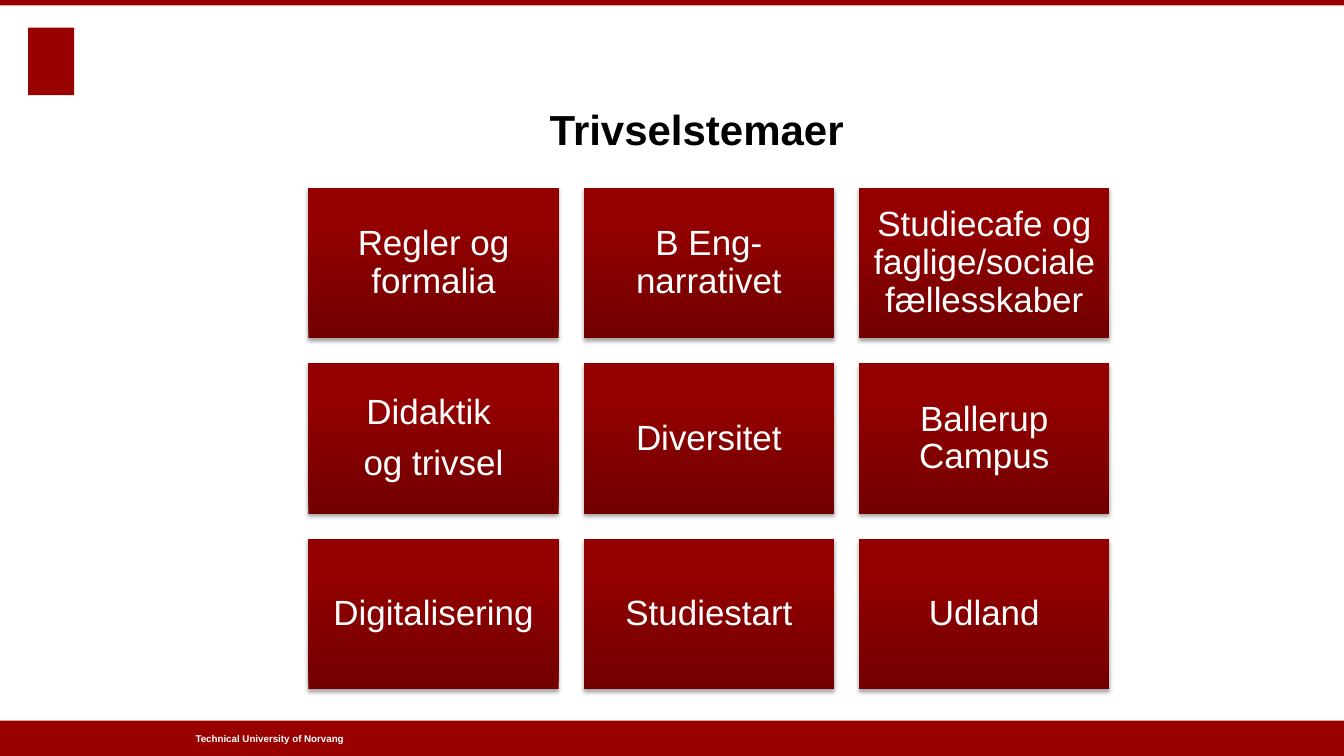
import dataclasses

import lxml.etree
import pptx
import pptx.dml.color
import pptx.enum.shapes
import pptx.enum.text
import pptx.oxml.ns
import pptx.util

Cm = pptx.util.Cm
Pt = pptx.util.Pt
RGBColor = pptx.dml.color.RGBColor
Align = pptx.enum.text.PP_ALIGN
Anchor = pptx.enum.text.MSO_ANCHOR

RED = RGBColor(0x99, 0x00, 0x00)
DARK = RGBColor(0x72, 0x00, 0x00)
LIGHT = RGBColor(0x94, 0x00, 0x00)
WHITE = RGBColor(0xFF, 0xFF, 0xFF)
BLACK = RGBColor(0x00, 0x00, 0x00)

WIDE, HIGH = 33.87, 19.05
COLS = 3


@dataclasses.dataclass
class Box:
    """A place on the slide, in centimetres."""
    left: float
    top: float
    width: float
    height: float

    def place(self) -> tuple:
        return Cm(self.left), Cm(self.top), Cm(self.width), Cm(self.height)


@dataclasses.dataclass
class Style:
    size: float
    color: RGBColor
    bold: bool = False
    align: Align = Align.CENTER
    line: float = 1.0
    after: float = 0


BARS = [
    Box(0, 18.16, WIDE, 0.89),     # footer band
    Box(0, 0, WIDE, 0.14),         # top band
    Box(0.71, 0.7, 1.16, 1.7),     # plain mark in the corner
]
THEMES = [
    "Regler og formalia", "B Eng-narrativet",
    "Studiecafe og faglige/sociale fællesskaber",
    "Didaktik \nog trivsel", "Diversitet", "Ballerup Campus",
    "Digitalisering", "Studiestart", "Udland",
]
TILE = Box(7.77, 4.74, 6.31, 3.79)
STEP_X, STEP_Y = 6.94, 4.42

HEAD = Style(30, BLACK, bold=True)
FOOT = Style(7, WHITE, bold=True, align=Align.LEFT)
LABEL = Style(25, WHITE, line=0.9, after=10)


def write(frame, text: str, style: Style, anchor: Anchor, inset: float = 0) -> None:
    frame.word_wrap = True
    frame.auto_size = pptx.enum.text.MSO_AUTO_SIZE.NONE
    frame.vertical_anchor = anchor
    frame.margin_left = frame.margin_right = Cm(inset)
    frame.margin_top = frame.margin_bottom = Cm(inset)
    frame.text = text
    for para in frame.paragraphs:
        para.alignment = style.align
        para.line_spacing = style.line
        para.space_before = Pt(0)
        para.space_after = Pt(style.after)
        para.font.name = "Arial"
        para.font.size = Pt(style.size)
        para.font.bold = style.bold
        para.font.color.rgb = style.color


def add_rect(slide, box: Box):
    rect = slide.shapes.add_shape(
        pptx.enum.shapes.MSO_SHAPE.RECTANGLE, *box.place())
    rect.shadow.inherit = False
    rect.line.fill.background()
    return rect


def add_bar(slide, box: Box) -> None:
    bar = add_rect(slide, box)
    bar.fill.solid()
    bar.fill.fore_color.rgb = RED


def add_shade(shape) -> None:
    tag = pptx.oxml.ns.qn
    effects = shape.element.spPr.find(tag("a:effectLst"))
    outer = lxml.etree.SubElement(
        effects, tag("a:outerShdw"), blurRad=str(Pt(3.1)),
        dist=str(Pt(1.8)), dir="5400000", rotWithShape="0")
    color = lxml.etree.SubElement(outer, tag("a:srgbClr"), val="000000")
    lxml.etree.SubElement(color, tag("a:alpha"), val="35000")


def add_tile(slide, box: Box, text: str) -> None:
    tile = add_rect(slide, box)
    tile.fill.gradient()
    tile.fill.gradient_angle = 90
    for stop, place, color in zip(
            tile.fill.gradient_stops, (0, 0.8), (DARK, LIGHT)):
        stop.position = place
        stop.color.rgb = color
    add_shade(tile)
    write(tile.text_frame, text, LABEL, Anchor.MIDDLE, 0.25)


def main() -> None:
    deck = pptx.Presentation()
    deck.slide_width, deck.slide_height = Cm(WIDE), Cm(HIGH)
    slide = deck.slides.add_slide(deck.slide_layouts[5])

    # Bands, corner mark and footer
    for bar in BARS:
        add_bar(slide, bar)
    foot = slide.shapes.add_textbox(*Box(4.93, 18.16, 9.45, 0.89).place())
    write(foot.text_frame, "Technical University of Norvang", FOOT, Anchor.MIDDLE)

    # Title
    title = slide.shapes.title
    title.left, title.top, title.width, title.height = Box(
        4.63, 1.19, 25.86, 2.69).place()
    write(title.text_frame, "Trivselstemaer", HEAD, Anchor.BOTTOM)

    # Grid of themes
    for spot, theme in enumerate(THEMES):
        row, col = divmod(spot, COLS)
        box = dataclasses.replace(
            TILE, left=TILE.left + col * STEP_X, top=TILE.top + row * STEP_Y)
        add_tile(slide, box, theme)

    deck.save("out.pptx")


if __name__ == "__main__":
    main()
